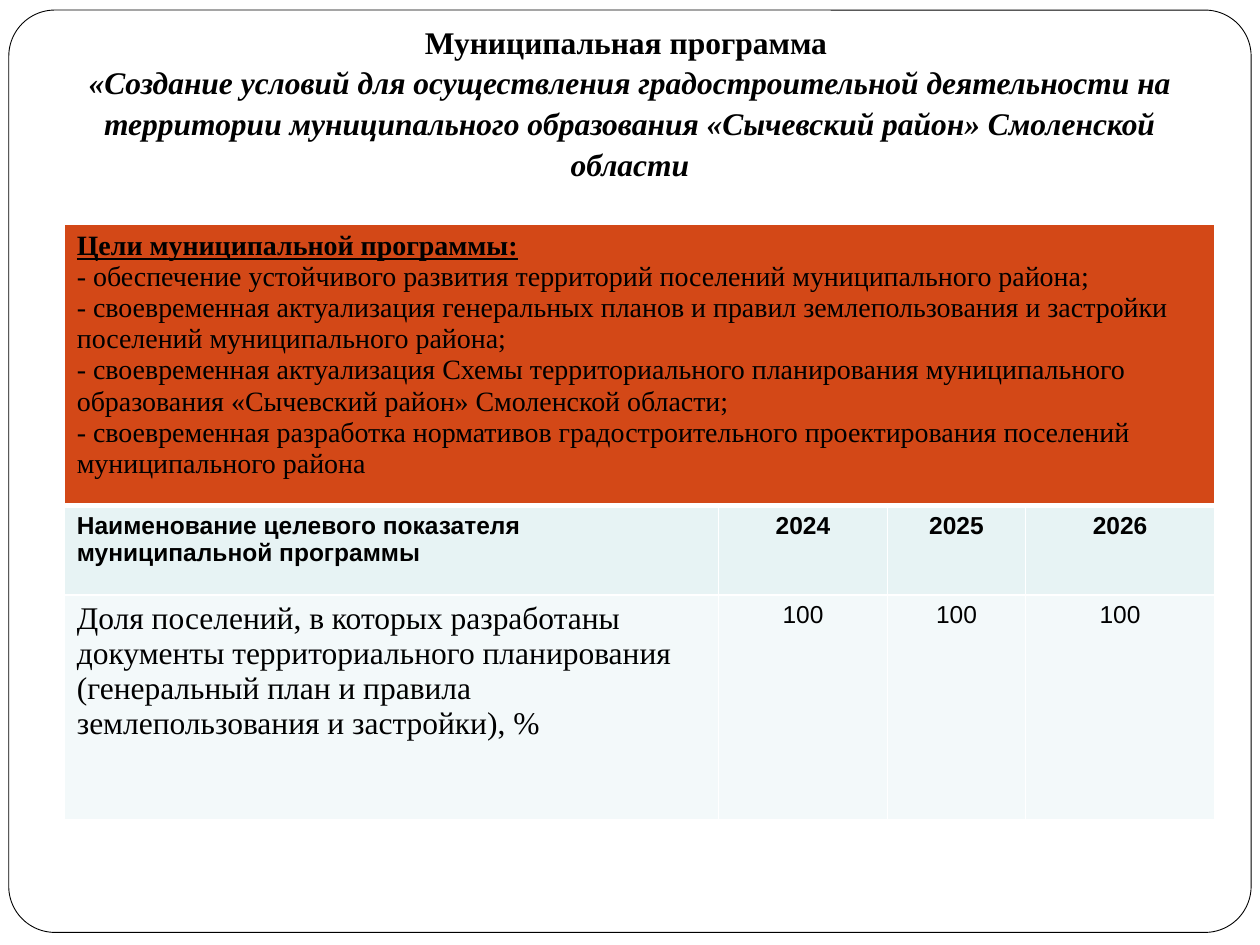
from dataclasses import dataclass

from lxml import etree
from pptx import Presentation
from pptx.dml.color import RGBColor
from pptx.enum.shapes import MSO_SHAPE
from pptx.enum.text import MSO_ANCHOR, PP_ALIGN
from pptx.oxml.ns import qn
from pptx.util import Inches, Pt

ROUND = MSO_SHAPE.ROUNDED_RECTANGLE
BOTTOM = MSO_ANCHOR.BOTTOM
LEFT, CENTER = PP_ALIGN.LEFT, PP_ALIGN.CENTER


@dataclass(frozen=True)
class Theme:
    serif: str = "Times New Roman"
    sans: str = "Arial"
    ink: str = "000000"
    paper: str = "FFFFFF"
    accent: str = "D34817"
    head: str = "E7F3F4"
    body: str = "F3F9FA"
    large: int = 18
    medium: int = 16
    small: int = 14


THEME = Theme()

GOALS = [
    "- обеспечение устойчивого развития территорий поселений муниципального района;",
    "- своевременная актуализация генеральных планов и правил землепользования и застройки "
    "поселений муниципального района;",
    "- своевременная актуализация Схемы территориального планирования муниципального "
    "образования «Сычевский район» Смоленской области;",
    "- своевременная разработка нормативов градостроительного проектирования поселений "
    "муниципального района",
]
HEADER = ["Наименование целевого показателя муниципальной программы", "2024", "2025", "2026"]
VALUES = [
    "Доля поселений, в которых разработаны документы территориального планирования "
    "(генеральный план и правила землепользования и застройки), %",
    "100", "100", "100",
]


def color(code):
    return RGBColor.from_string(code)


def add_run(para, text, size, face=THEME.serif, bold=False, italic=False, under=False):
    run = para.add_run()
    run.text = text
    font = run.font
    font.name, font.size = face, Pt(size)
    font.bold, font.italic, font.underline = bold, italic, under
    font.color.rgb = color(THEME.ink)


def set_edges(cell, **widths):
    """Draw the cell's borders; widths are points keyed by L, R, T and B."""
    props = cell._tc.get_or_add_tcPr()
    for index, side in enumerate("LRTB"):
        line = etree.Element(qn(f"a:ln{side}"), w=str(Pt(widths.get(side, 1))))
        fill = etree.SubElement(line, qn("a:solidFill"))
        etree.SubElement(fill, qn("a:srgbClr"), val=THEME.paper)
        props.insert(index, line)


def style_cell(cell, fill, **widths):
    cell.fill.solid()
    cell.fill.fore_color.rgb = color(fill)
    set_edges(cell, **widths)


def add_frame(slide, left, top, width, height):
    frame = slide.shapes.add_shape(ROUND, left, top, width, height)
    frame.adjustments[0] = 0.05
    frame.shadow.inherit = False
    frame.fill.solid()
    frame.fill.fore_color.rgb = color(THEME.paper)
    frame.line.color.rgb = color(THEME.ink)
    frame.line.width = Pt(0.5)


def add_title(slide, left, top, width, height):
    text = slide.shapes.add_textbox(left, top, width, height).text_frame
    text.word_wrap = True
    text.vertical_anchor = BOTTOM
    text.margin_bottom = Inches(0.1)
    para = text.paragraphs[0]
    para.alignment = CENTER
    para.line_spacing = 1.08
    add_run(para, "Муниципальная программа ", THEME.large, bold=True)
    para.add_line_break()
    add_run(para, "«Создание условий для осуществления градостроительной деятельности на "
            "территории муниципального образования «Сычевский район» Смоленской области",
            THEME.large, bold=True, italic=True)


def fill_goals(cell):
    style_cell(cell, THEME.accent, B=3)
    text = cell.text_frame
    add_run(text.paragraphs[0], "Цели муниципальной программы:", THEME.medium,
            bold=True, under=True)
    for goal in GOALS:
        add_run(text.add_paragraph(), goal, THEME.medium)


def fill_row(cells, texts, fill, label, bold=False, **widths):
    """Fill one row; label is the face and size of its first cell."""
    for index, (cell, text) in enumerate(zip(cells, texts)):
        style_cell(cell, fill, **widths)
        para = cell.text_frame.paragraphs[0]
        para.alignment = CENTER if index else LEFT
        face, size = (THEME.sans, THEME.small) if index else label
        add_run(para, text, size, face, bold)


def add_goals(slide, left, top, width, height):
    table = slide.shapes.add_table(3, 4, left, top, width, height).table
    parts = [5.2, 1.34, 1.1, 1.5]
    for column, part in zip(table.columns, parts):
        column.width = int(width * part / sum(parts))
    rows = [2.13, 0.71, 1.78]
    for row, part in zip(table.rows, rows):
        row.height = int(height * part / sum(rows))
    for cell in table.rows[0].cells:
        set_edges(cell, B=3)
    table.cell(0, 0).merge(table.cell(0, 3))
    fill_goals(table.cell(0, 0))
    fill_row(table.rows[1].cells, HEADER, THEME.head, (THEME.sans, THEME.small),
             bold=True, T=3)
    fill_row(table.rows[2].cells, VALUES, THEME.body, (THEME.serif, THEME.large))


def main():
    deck = Presentation()
    deck.slide_width, deck.slide_height = Inches(10), Inches(7.5)
    slide = deck.slides.add_slide(deck.slide_layouts[6])
    add_frame(slide, Inches(0.07), Inches(0.08), Inches(9.86), Inches(7.32))
    add_title(slide, Inches(0.5), Inches(0.3), Inches(9), Inches(1.25))
    add_goals(slide, Inches(0.51), Inches(1.78), Inches(9.13), Inches(4.62))
    deck.save("out.pptx")


if __name__ == "__main__":
    main()
